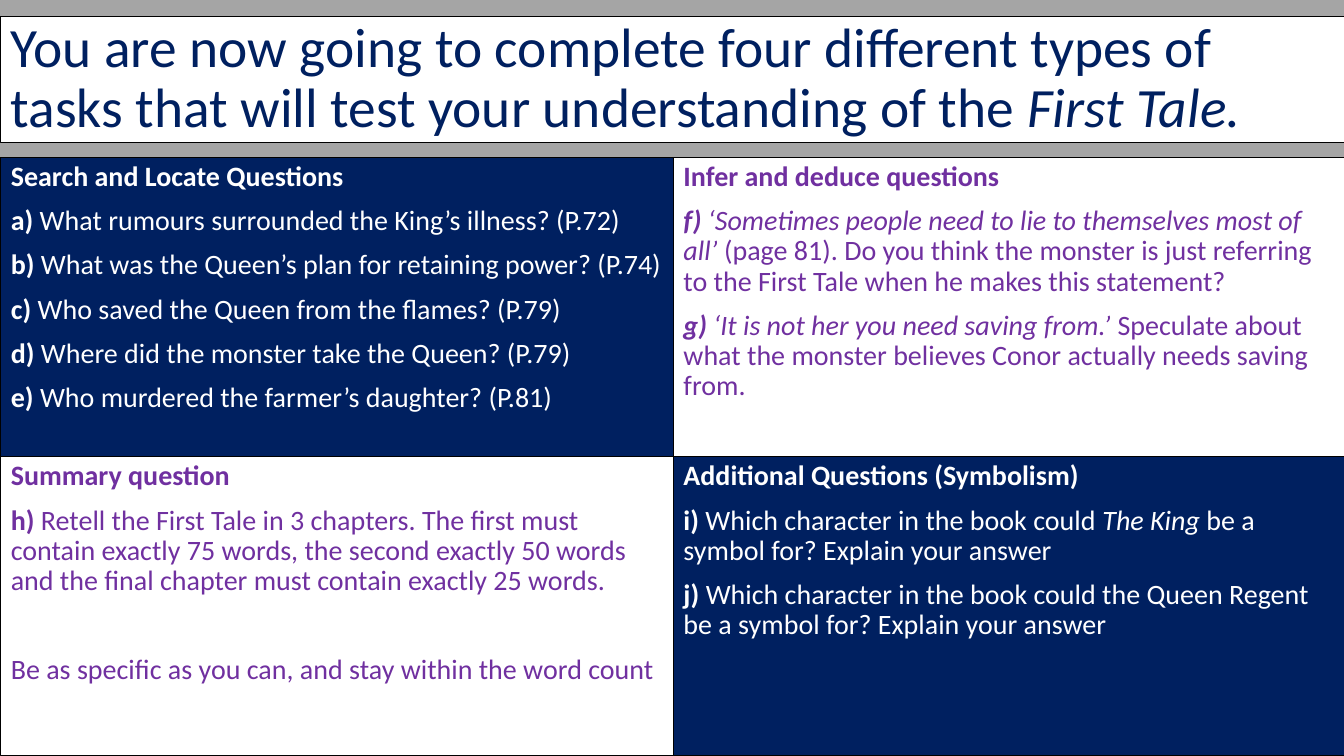
from lxml import etree
from pptx import Presentation, util as u
from pptx.dml import color
from pptx.enum import text
from pptx.oxml import ns

NAVY, PURPLE, WHITE, BLACK, GREY = "002060", "7030A0", "FFFFFF", "000000", "A5A5A5"


def rgb(value):
    """Turn a hex string into a colour."""
    return color.RGBColor.from_string(value)


class Deck:
    """Hold the style and the current slide."""

    font = "Calibri"

    def __init__(self, width, height, layout, background):
        self.prs = Presentation()
        self.prs.slide_width, self.prs.slide_height = u.Pt(width), u.Pt(height)
        self.s = self.prs.slides.add_slide(self.prs.slide_layouts[layout])
        fill = self.s.background.fill
        fill.solid()
        fill.fore_color.rgb = rgb(background)

    def box(self, idx, bounds, fill, anchor):
        """Place a placeholder as a filled, outlined box."""
        sp = self.s.placeholders[idx]
        sp.left, sp.top, sp.width, sp.height = map(u.Pt, bounds)
        sp.fill.solid()
        sp.fill.fore_color.rgb = rgb(fill)
        sp.line.color.rgb = rgb(BLACK)
        sp.line.width = u.Pt(0.75)
        tf = sp.text_frame
        tf.word_wrap = True
        tf.auto_size = text.MSO_AUTO_SIZE.NONE
        tf.vertical_anchor = anchor
        return tf

    def add_runs(self, p, runs, size, ink, before=0):
        """Fill a paragraph with (text, style) runs."""
        p.alignment = text.PP_ALIGN.LEFT
        p.line_spacing = 0.9
        p.space_before = u.Pt(before)
        pPr = p._p.get_or_add_pPr()
        pPr.set("marL", "0")
        pPr.set("indent", "0")
        etree.SubElement(pPr, ns.qn("a:buNone"))
        for words, style in runs:
            r = p.add_run()
            r.text = words
            r.font.name, r.font.size = self.font, u.Pt(size)
            r.font.color.rgb = rgb(ink)
            r.font.bold, r.font.italic = "b" in style, "i" in style

    def title(self, runs, bounds):
        """Add the slide title."""
        tf = self.box(0, bounds, WHITE, text.MSO_ANCHOR.MIDDLE)
        self.add_runs(tf.paragraphs[0], runs, 39.6, NAVY)

    def panel(self, idx, bounds, fill, ink, heading, items):
        """Add a headed list of (space before, runs) items."""
        tf = self.box(idx, bounds, fill, text.MSO_ANCHOR.TOP)
        self.add_runs(tf.paragraphs[0], [(heading, "b")], 20, ink, 10)
        for before, runs in items:
            self.add_runs(tf.add_paragraph(), runs, 20, ink, before)


def question(label, *runs, style="b"):
    """Return a question with its bold label."""
    return 10, [(label + ") ", style), *runs]


LOCATE = [
    "What rumours surrounded the King’s illness? (P.72)",
    "What was the Queen’s plan for retaining power? (P.74)",
    "Who saved the Queen from the flames? (P.79)",
    "Where did the monster take the Queen? (P.79)",
    "Who murdered the farmer’s daughter? (P.81)",
]
PANELS = [
    ("Search and Locate Questions",
     [question(label, (words, "")) for label, words in zip("abcde", LOCATE)]),
    ("Infer and deduce questions", [
        question("f", ("‘Sometimes people need to lie to themselves most of all’", "i"),
                 (" (page 81). Do you think the monster is just referring to the "
                  "First Tale when he makes this statement?", ""), style="bi"),
        question("g", ("‘It is not her you need saving from.’", "i"),
                 (" Speculate about what the monster believes Conor actually "
                  "needs saving from.", ""), style="bi")]),
    ("Summary question", [
        question("h", ("Retell the First Tale in 3 chapters. The first must contain "
                       "exactly 75 words, the second exactly 50 words and the final "
                       "chapter must contain exactly 25 words.", "")),
        (42, [("Be as specific as you can, and stay within the word count", "")])]),
    ("Additional Questions (Symbolism)", [
        question("i", ("Which character in the book could ", ""), ("The King", "i"),
                 (" be a symbol for? Explain your answer", "")),
        question("j", ("Which character in the book could the Queen Regent be a "
                       "symbol for? Explain your answer", ""))]),
]
LEFT, TOP, WIDTH, HEIGHT = 0.5, 112.2, 480.5, 213.9

deck = Deck(960, 540, 4, GREY)
deck.title([("You are now going to complete four different types of tasks that will "
             "test your understanding of the ", ""), ("First Tale.", "i")],
           (LEFT, 12, 960, 90))
for i, (heading, items) in enumerate(PANELS):
    row, col = divmod(i, 2)
    fill, ink = (WHITE, PURPLE) if row != col else (NAVY, WHITE)
    bounds = (LEFT + col * WIDTH, TOP + row * HEIGHT, WIDTH, HEIGHT)
    deck.panel(i + 1, bounds, fill, ink, heading, items)
deck.prs.save("out.pptx")
